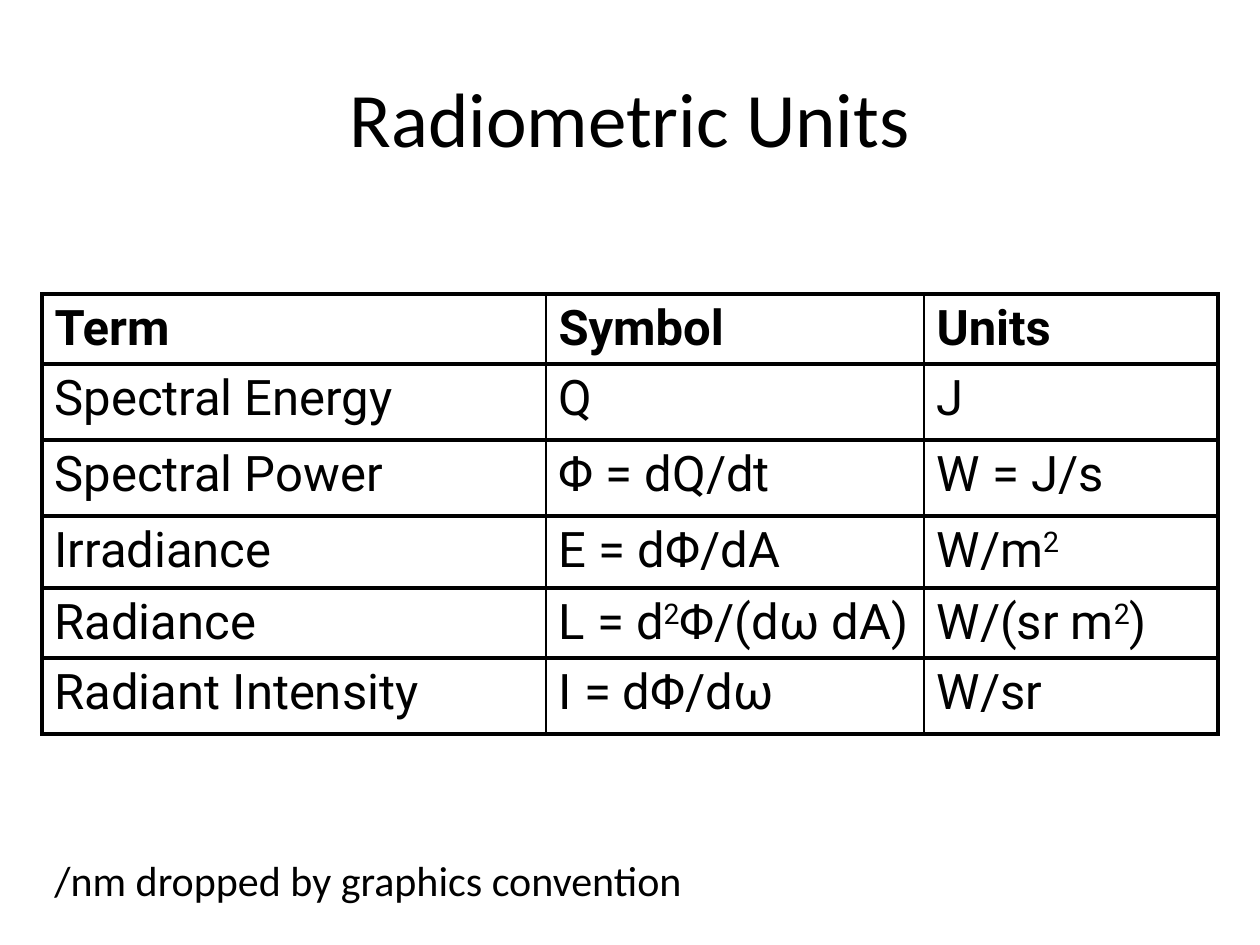
from lxml import etree
from pptx import Presentation
from pptx.dml.color import RGBColor
from pptx.enum.text import MSO_ANCHOR, MSO_AUTO_SIZE, PP_ALIGN
from pptx.oxml.ns import qn
from pptx.util import Emu, Pt

MIDDLE = MSO_ANCHOR.MIDDLE
FIT_SHAPE = MSO_AUTO_SIZE.SHAPE_TO_FIT_TEXT
CENTER = PP_ALIGN.CENTER

TITLE = "Radiometric Units"
FOOTNOTE = "/nm dropped by graphics convention"
SUPERSCRIPT_MARK = "^"
UNITS = [
    ("Term", "Symbol", "Units"),
    ("Spectral Energy", "Q", "J"),
    ("Spectral Power", "Φ = dQ/dt", "W = J/s"),
    ("Irradiance", "E = dΦ/dA", "W/m^2^"),
    ("Radiance", "L = d^2^Φ/(dω dA)", "W/(sr m^2^)"),
    ("Radiant Intensity", "I = dΦ/dω", "W/sr"),
]

COLORS = {"text": "000000", "border": "000000"}
SLIDE_SIZE = (1260, 945)
TITLE_BOX = (63, 38, 1134, 157)
TABLE_ORIGIN = (42, 294)
COLUMN_WIDTHS = (504, 378, 294)
ROW_HEIGHTS = (63, 76, 76, 72, 60, 76)
FOOTNOTE_BOX = (42, 848, 663, 63)
THICK, THIN = 2.25, 1

TITLE_FONT = {"name": "Calibri", "size": Pt(44)}
FOOTNOTE_FONT = {"name": "Calibri", "size": Pt(24)}
HEADER_FONT = {"name": "Roboto", "size": Pt(28), "bold": True}
BODY_FONT = {**HEADER_FONT, "bold": False}


def px(value):
    return Emu(round(value * 914400 / 126))


def place(shape, box):
    for side, value in zip(("left", "top", "width", "height"), box):
        setattr(shape, side, px(value))


def add_text(paragraph, text, font):
    for index, part in enumerate(text.split(SUPERSCRIPT_MARK)):
        if not part:
            continue
        run = paragraph.add_run()
        run.text = part
        for name, value in font.items():
            setattr(run.font, name, value)
        run.font.color.rgb = RGBColor.from_string(COLORS["text"])
        if index % 2:
            run._r.get_or_add_rPr().set("baseline", "30000")


def space_before(paragraph, percent):
    spacing = etree.SubElement(paragraph._p.get_or_add_pPr(), qn("a:spcBef"))
    etree.SubElement(spacing, qn("a:spcPct"), val=str(percent * 1000))


def set_borders(cell, widths):
    properties = cell._tc.get_or_add_tcPr()
    for side, width in widths.items():
        line = etree.SubElement(properties, qn(f"a:ln{side}"), w=str(Pt(width)))
        fill = etree.SubElement(line, qn("a:solidFill"))
        etree.SubElement(fill, qn("a:srgbClr"), val=COLORS["border"])


def add_units_table(slide):
    box = (*TABLE_ORIGIN, sum(COLUMN_WIDTHS), sum(ROW_HEIGHTS))
    table = slide.shapes.add_table(
        len(UNITS), len(COLUMN_WIDTHS), *map(px, box)
    ).table
    table.first_row = table.horz_banding = False
    for column, width in zip(table.columns, COLUMN_WIDTHS):
        column.width = px(width)
    for row, height in zip(table.rows, ROW_HEIGHTS):
        row.height = px(height)
    last_column = len(COLUMN_WIDTHS) - 1
    for row_index, terms in enumerate(UNITS):
        for column_index, text in enumerate(terms):
            cell = table.cell(row_index, column_index)
            set_borders(cell, {
                "L": THICK if column_index == 0 else THIN,
                "R": THICK if column_index == last_column else THIN,
                "T": THICK,
                "B": THICK,
            })
            cell.fill.background()
            paragraph = cell.text_frame.paragraphs[0]
            space_before(paragraph, 20)
            add_text(paragraph, text, BODY_FONT if row_index else HEADER_FONT)


def main():
    presentation = Presentation()
    presentation.slide_width, presentation.slide_height = map(px, SLIDE_SIZE)
    slide = presentation.slides.add_slide(presentation.slide_layouts[5])

    title = slide.shapes.title
    place(title, TITLE_BOX)
    title.text_frame.vertical_anchor = MIDDLE
    heading = title.text_frame.paragraphs[0]
    heading.alignment = CENTER
    add_text(heading, TITLE, TITLE_FONT)

    add_units_table(slide)

    footnote = slide.shapes.add_textbox(*map(px, FOOTNOTE_BOX)).text_frame
    footnote.word_wrap = False
    footnote.auto_size = FIT_SHAPE
    add_text(footnote.paragraphs[0], FOOTNOTE, FOOTNOTE_FONT)

    presentation.save("out.pptx")


if __name__ == "__main__":
    main()
